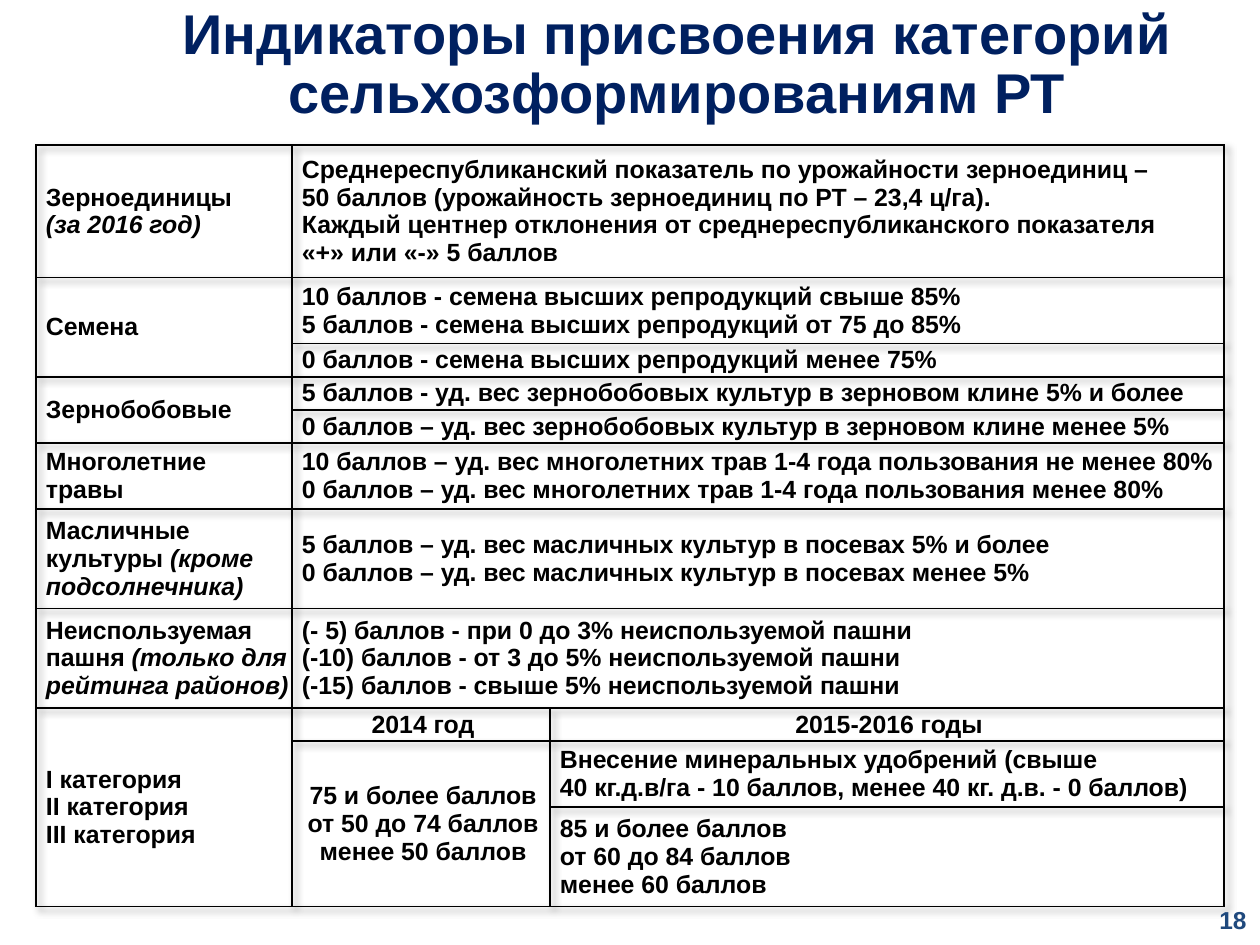
from lxml import etree
from pptx import Presentation
from pptx.dml.color import RGBColor
from pptx.enum.text import MSO_ANCHOR, PP_ALIGN
from pptx.oxml import parse_xml
from pptx.oxml.ns import nsdecls, qn
from pptx.util import Pt

LEFT, CENTER = PP_ALIGN.LEFT, PP_ALIGN.CENTER
TOP, MIDDLE = MSO_ANCHOR.TOP, MSO_ANCHOR.MIDDLE
BLACK = RGBColor(0x00, 0x00, 0x00)
NAVY = RGBColor(0x00, 0x20, 0x60)
BLUE = RGBColor(0x1F, 0x49, 0x7D)
PX = 914400 / 126

TITLE = "Индикаторы присвоения категорий сельхозформированиям РТ"
PAGE = "18"

TABLE_LEFT, TABLE_TOP, TABLE_HEIGHT = 36, 145, 762
COLUMNS = [256, 258, 674]
ROW_LINES = [4, 2, 1, 1, 1, 2, 3, 3, 1, 2, 3]

# row, column, row span, column span, alignment, paragraphs
CELLS = [
    (0, 0, 1, 1, LEFT, ["Зерноединицы", ("", "(за 2016 год)")]),
    (0, 1, 1, 2, LEFT, [
        "Среднереспубликанский показатель по урожайности зерноединиц –\n"
        "50 баллов (урожайность зерноединиц по РТ – 23,4 ц/га).",
        "Каждый центнер отклонения от среднереспубликанского показателя\n"
        "«+» или «-» 5 баллов"]),
    (1, 0, 2, 1, LEFT, ["Семена"]),
    (1, 1, 1, 2, LEFT, ["10 баллов - семена высших репродукций свыше 85%",
                        "5 баллов - семена высших репродукций от 75 до 85%"]),
    (2, 1, 1, 2, LEFT, ["0 баллов - семена высших репродукций менее 75%"]),
    (3, 0, 2, 1, LEFT, ["Зернобобовые"]),
    (3, 1, 1, 2, LEFT, ["5 баллов - уд. вес зернобобовых культур в зерновом клине 5% и более"]),
    (4, 1, 1, 2, LEFT, ["0 баллов – уд. вес зернобобовых культур в зерновом клине менее 5%"]),
    (5, 0, 1, 1, LEFT, ["Многолетние\nтравы"]),
    (5, 1, 1, 2, LEFT, ["10 баллов – уд. вес многолетних трав 1-4 года пользования не менее 80%",
                        "0 баллов – уд. вес многолетних трав 1-4 года пользования менее 80%"]),
    (6, 0, 1, 1, LEFT, [("Масличные культуры ", "(кроме подсолнечника)")]),
    (6, 1, 1, 2, LEFT, ["5 баллов – уд. вес масличных культур в посевах 5% и более",
                        "0 баллов – уд. вес масличных культур в посевах менее 5%"]),
    (7, 0, 1, 1, LEFT, [("Неиспользуемая пашня ", "(только для рейтинга районов)")]),
    (7, 1, 1, 2, LEFT, ["(- 5) баллов - при 0 до 3% неиспользуемой пашни",
                        "(-10) баллов - от 3 до 5% неиспользуемой пашни",
                        "(-15) баллов - свыше 5% неиспользуемой пашни"]),
    (8, 0, 3, 1, LEFT, ["I категория", "II категория", "III категория"]),
    (8, 1, 1, 1, CENTER, ["2014 год"]),
    (8, 2, 1, 1, CENTER, ["2015-2016 годы"]),
    (9, 1, 2, 1, CENTER, ["75 и более баллов", "от 50 до 74 баллов", "менее 50 баллов"]),
    (9, 2, 1, 1, LEFT, ["Внесение минеральных удобрений (свыше\n"
                        "40 кг.д.в/га - 10 баллов, менее 40 кг. д.в. - 0 баллов)"]),
    (10, 2, 1, 1, LEFT, ["85 и более баллов", "от 60 до 84 баллов", "менее 60 баллов"]),
]


def emu(px):
    return round(px * PX)


def write(tf, paragraphs, size=14.2, color=BLACK, align=LEFT, spacing=None):
    for i, content in enumerate(paragraphs):
        p = tf.paragraphs[0] if i == 0 else tf.add_paragraph()
        p.alignment = align
        if spacing:
            p.line_spacing = Pt(spacing)
        plain, italic = (content, "") if isinstance(content, str) else content
        for text, slanted in ((plain, False), (italic, True)):
            for n, line in enumerate(text.split("\n") if text else []):
                if n:
                    p.add_line_break()
                r = p.add_run()
                r.text = line
                r.font.name = "Arial"
                r.font.size = Pt(size)
                r.font.bold = True
                r.font.italic = slanted
                r.font.color.rgb = color


def add_text(slide, box, text, anchor=TOP, **style):
    tf = slide.shapes.add_textbox(*map(emu, box)).text_frame
    tf.word_wrap = True
    tf.vertical_anchor = anchor
    write(tf, [text], **style)


def add_borders(cell):
    tc_pr = cell._tc.get_or_add_tcPr()
    for side in ("a:lnL", "a:lnR", "a:lnT", "a:lnB"):
        ln = etree.SubElement(tc_pr, qn(side), w=str(Pt(1)))
        fill = etree.SubElement(ln, qn("a:solidFill"))
        etree.SubElement(fill, qn("a:srgbClr"), val=str(BLACK))


def add_indicators(slide):
    frame = slide.shapes.add_table(
        len(ROW_LINES), len(COLUMNS),
        *map(emu, (TABLE_LEFT, TABLE_TOP, sum(COLUMNS), TABLE_HEIGHT)))
    table = frame.table
    table.first_row = table.horz_banding = False
    table._tbl.tblPr.insert(0, parse_xml(
        f'<a:effectLst {nsdecls("a")}><a:outerShdw blurRad="50800" dist="38100" '
        'dir="2700000" algn="tl" rotWithShape="0"><a:srgbClr val="000000">'
        '<a:alpha val="40000"/></a:srgbClr></a:outerShdw></a:effectLst>'))
    for column, width in zip(table.columns, COLUMNS):
        column.width = emu(width)
    for row, lines in zip(table.rows, ROW_LINES):
        row.height = emu(TABLE_HEIGHT * lines / sum(ROW_LINES))
    for cell in table.iter_cells():
        add_borders(cell)
        cell.fill.background()
        cell.vertical_anchor = MIDDLE
        cell.margin_left = emu(10)
        cell.margin_right = cell.margin_top = cell.margin_bottom = 0
    for row, col, row_span, col_span, align, paragraphs in CELLS:
        cell = table.cell(row, col)
        if row_span * col_span > 1:
            cell.merge(table.cell(row + row_span - 1, col + col_span - 1))
        if col:
            cell.margin_right = emu(6)
        write(cell.text_frame, paragraphs, align=align)


def main():
    prs = Presentation()
    prs.slide_width, prs.slide_height = emu(1260), emu(945)
    slide = prs.slides.add_slide(prs.slide_layouts[6])
    add_indicators(slide)
    add_text(slide, (94, 0, 1166, 132), TITLE, size=32, color=NAVY, align=CENTER, spacing=34)
    add_text(slide, (1206, 895, 54, 50), PAGE, anchor=MIDDLE, size=14, color=BLUE, align=CENTER)
    prs.save("out.pptx")


if __name__ == "__main__":
    main()
